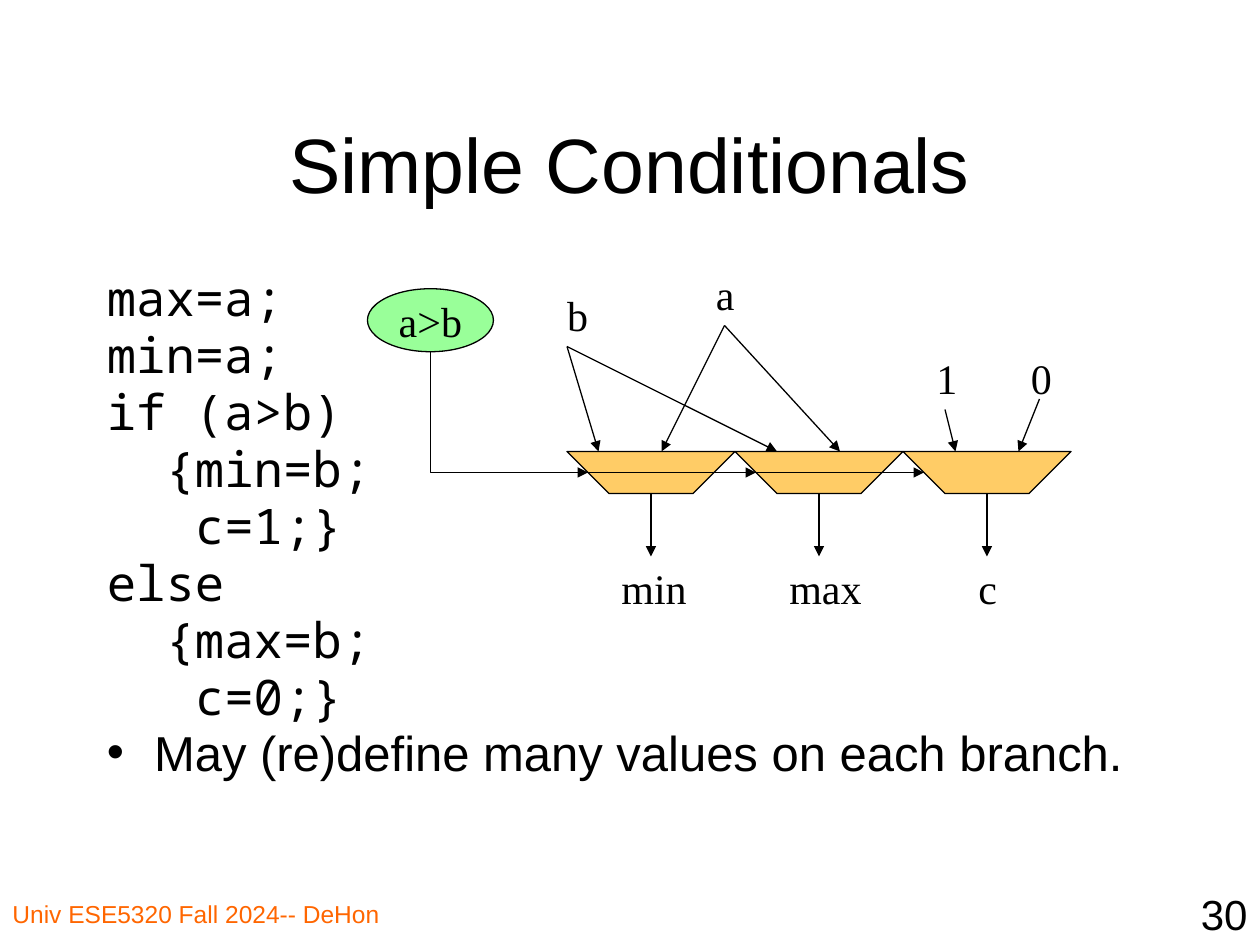
from lxml import etree
from pptx import Presentation
from pptx.dml.color import RGBColor
from pptx.enum.shapes import MSO_CONNECTOR as Connector, MSO_SHAPE as Shape
from pptx.enum.text import MSO_ANCHOR as Anchor, PP_ALIGN as Align
from pptx.oxml.ns import qn
from pptx.util import Pt

COLORS = {"text": "000000", "footer": "FF6600", "condition": "99FF99", "mux": "FFCC66"}
SANS, MONO, SERIF = "Arial", "Noto Sans Mono", "Times New Roman"
CODE_SIZE = 28
CODE_CHAR = 16.8  # width of one monospaced character
# Code lines: indent in characters, text
CODE = [(0, "max=a;"), (0, "min=a;"), (0, "if (a>b)"), (2, "{min=b;"), (3, "c=1;}"),
        (0, "else"), (2, "{max=b;"), (3, "c=0;}")]
MUX_WIDTH, MUX_HEIGHT = 96, 24


def write(paragraph, text, font=SERIF, size=24, color="text", align=Align.LEFT):
    paragraph.alignment = align
    run = paragraph.add_run()
    run.text = text
    run.font.name = font
    run.font.size = Pt(size)
    run.font.color.rgb = RGBColor.from_string(COLORS[color])


def add_text(slide, box, text, wrap=True, **text_format):
    shape = slide.shapes.add_textbox(*map(Pt, box))
    shape.text_frame.word_wrap = wrap
    write(shape.text_frame.paragraphs[0], text, **text_format)


def style_shape(shape, fill):
    shape.shadow.inherit = False
    shape.fill.solid()
    shape.fill.fore_color.rgb = RGBColor.from_string(COLORS[fill])
    shape.line.color.rgb = RGBColor.from_string(COLORS["text"])
    shape.line.width = Pt(0.75)


def add_arrow(slide, start, end, kind=Connector.STRAIGHT):
    arrow = slide.shapes.add_connector(kind, *map(Pt, (*start, *end)))
    arrow.line.color.rgb = RGBColor.from_string(COLORS["text"])
    arrow.line.width = Pt(0.75)
    properties = arrow._element.spPr
    etree.SubElement(properties.find(qn("a:ln")), qn("a:tailEnd"), type="triangle")
    etree.SubElement(properties, qn("a:effectLst"))
    return arrow


def add_corner_arrow(slide, start, end):
    """Arrow that runs down from start, then right to end."""
    (x1, y1), (x2, y2) = start, end
    middle_x, middle_y = (x1 + x2) / 2, (y1 + y2) / 2
    half_width, half_height = (y2 - y1) / 2, (x2 - x1) / 2  # turned by 270 degrees
    arrow = add_arrow(slide, (middle_x + half_width, middle_y - half_height),
                      (middle_x - half_width, middle_y + half_height), Connector.ELBOW)
    properties = arrow._element.spPr
    properties.find(qn("a:xfrm")).set("rot", str(270 * 60000))
    properties.find(qn("a:prstGeom")).set("prst", "bentConnector2")


def add_mux(slide, left, top):
    builder = slide.shapes.build_freeform(Pt(left), Pt(top), scale=1.0)
    corners = [(24, MUX_HEIGHT), (MUX_WIDTH - 24, MUX_HEIGHT), (MUX_WIDTH, 0)]
    builder.add_line_segments([(Pt(left + x), Pt(top + y)) for x, y in corners], close=True)
    style_shape(builder.convert_to_shape(), "mux")


def add_title(slide, box, text):
    title = slide.shapes.title
    title.left, title.top, title.width, title.height = map(Pt, box)
    title.text_frame.vertical_anchor = Anchor.MIDDLE
    write(title.text_frame.paragraphs[0], text, font=SANS, size=44, align=Align.CENTER)


def add_body(slide, box):
    frame = slide.shapes.add_textbox(*map(Pt, box)).text_frame
    frame.word_wrap = True

    def add_line(text, font, margin, indent):
        paragraph = frame.add_paragraph() if frame.text else frame.paragraphs[0]
        paragraph.line_spacing = 0.8
        paragraph.space_before = Pt(CODE_SIZE * 0.2)
        write(paragraph, text, font=font, size=CODE_SIZE)
        properties = paragraph._p.get_or_add_pPr()
        properties.set("marL", str(Pt(margin)))
        properties.set("indent", str(Pt(indent)))
        return properties

    for characters, text in CODE:
        add_line(text, MONO, characters * CODE_CHAR, 0)
    bullet = add_line("May (re)define many values on each branch.", SANS, 27, -27)
    etree.SubElement(bullet, qn("a:buFont"), typeface=SANS)
    etree.SubElement(bullet, qn("a:buChar"), char="•")


def add_diagram(slide, box):
    left, top = box[:2]

    def at(x, y):
        return left + x, top + y

    def label(x, y, width, text):
        add_text(slide, (*at(x, y), width, 36), text, wrap=False)

    # Condition and its first select line
    condition = slide.shapes.add_shape(Shape.OVAL, *map(Pt, (*at(0, 15), 72, 36)))
    style_shape(condition, "condition")
    condition.text_frame.word_wrap = False
    condition.text_frame.vertical_anchor = Anchor.MIDDLE
    write(condition.text_frame.paragraphs[0], "a>b", align=Align.CENTER)
    add_corner_arrow(slide, at(36, 51), at(126, 120))

    # Multiplexers with their outputs: label, offset, width
    outputs = [("min", 24, 54), ("max", 24, 58), ("c", 36, 27)]
    for index, (text, offset, width) in enumerate(outputs):
        x = 114 + index * MUX_WIDTH
        center = x + MUX_WIDTH / 2
        add_arrow(slide, at(center, 126), at(center, 168))
        add_mux(slide, *at(x, 108))
        label(x + offset, 168, width, text)

    # Inputs: label, label position, arrow start, arrow ends
    inputs = [("b", (107, 12), (114, 48), (132, 234)),
              ("a", (192, 0), (204, 36), (168, 270)),
              ("1", (318, 48), (330, 84), (336,)),
              ("0", (372, 48), (384, 78), (372,))]
    for text, position, start, ends in inputs:
        label(*position, 27, text)
        for x in ends:
            add_arrow(slide, at(*start), at(x, 108))

    # Select lines to the other multiplexers
    for index in (1, 2):
        add_arrow(slide, at(60, 120), at(126 + index * MUX_WIDTH, 120))


def add_footer(slide, box):
    left, top, width, height = box
    add_text(slide, (left, top + 6, 276, height - 6), "Univ ESE5320 Fall 2024-- DeHon",
             font=SANS, size=14, color="footer")
    add_text(slide, (left + width - 150, top, 150, height), "30", font=SANS,
             align=Align.RIGHT)


def main():
    presentation = Presentation()
    presentation.slide_width, presentation.slide_height = Pt(720), Pt(540)
    slide = presentation.slides.add_slide(presentation.slide_layouts[5])
    add_footer(slide, (0, 504, 720, 36))
    add_title(slide, (54, 48, 612, 90), "Simple Conditionals")
    add_body(slide, (54, 156, 612, 324))
    add_diagram(slide, (210, 150, 402, 204))
    presentation.save("out.pptx")


if __name__ == "__main__":
    main()
